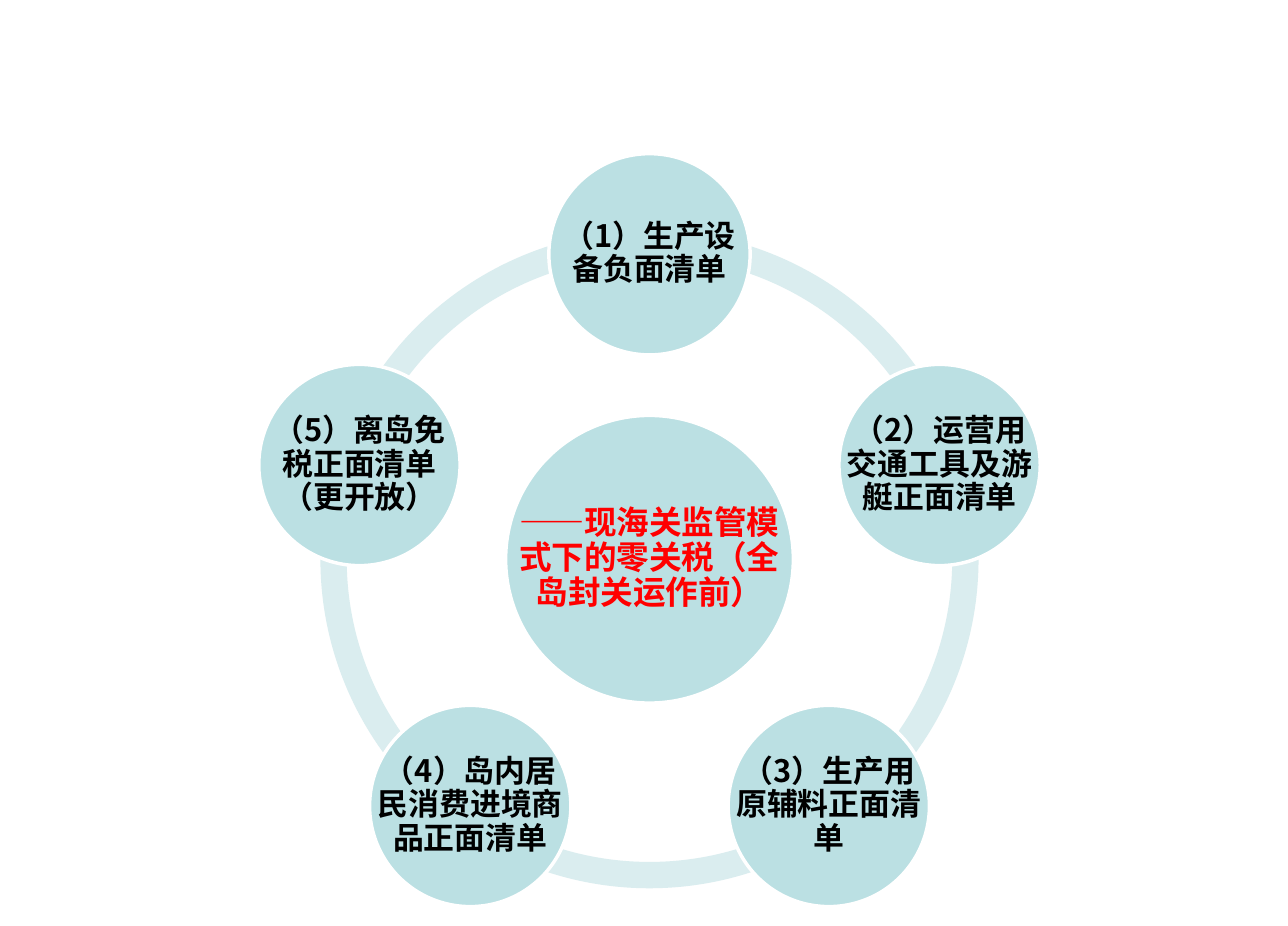
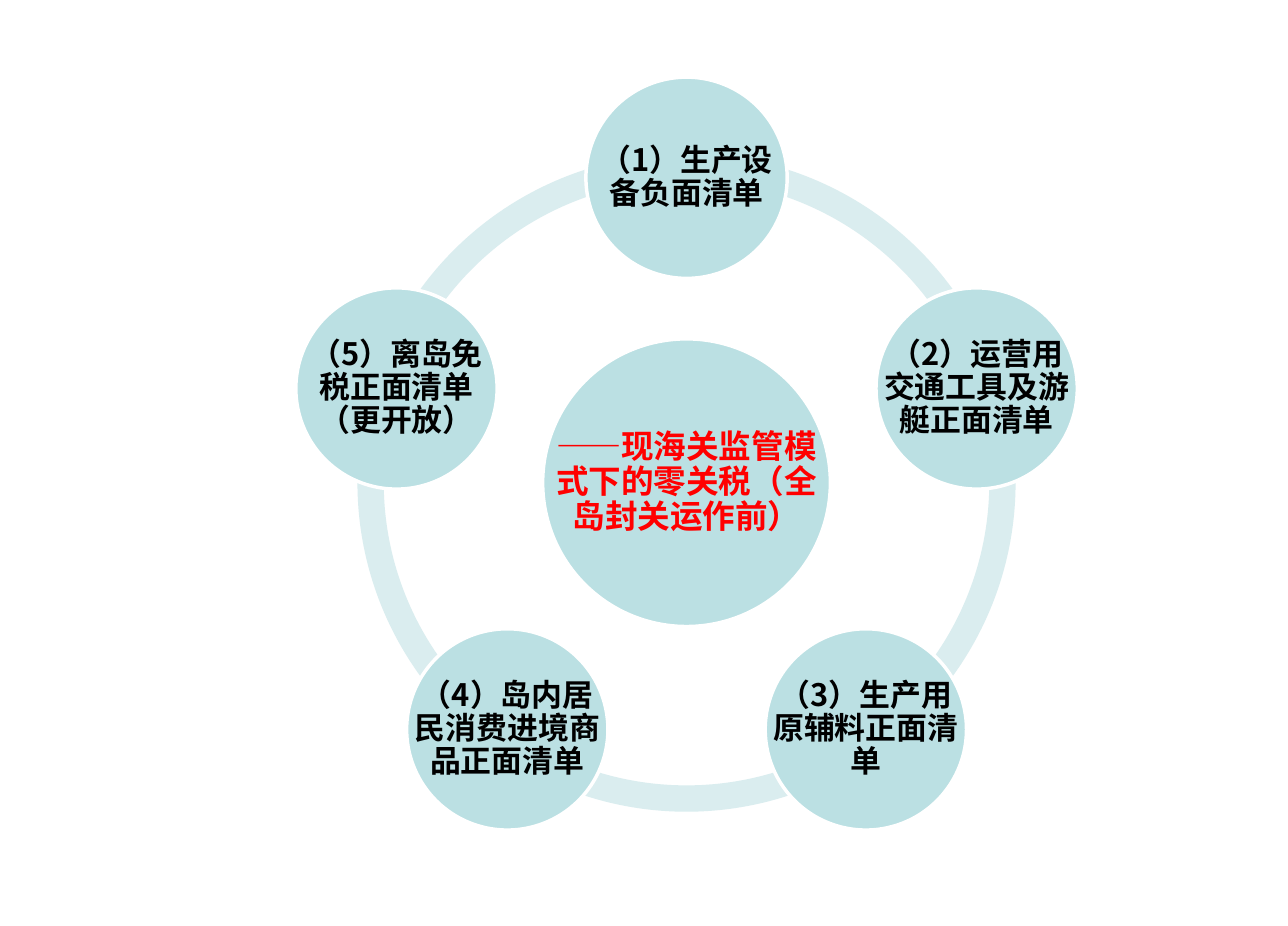
import dataclasses
import math
import typing

import pptx
import pptx.dml.color
import pptx.enum.shapes
import pptx.enum.text
import pptx.oxml.ns
import pptx.util
from lxml import etree
from pptx.util import Inches

FONT = "Noto Sans CJK SC"
HUES = {"disc": "BBE0E3", "ring": "DAEDEF", "edge": "FFFFFF",
        "core": "FF0000", "node": "000000"}
KINDS = pptx.enum.shapes.MSO_SHAPE

RING = 5.33   # outer diameter of the ring
BAND = 0.04   # ring thickness as a share of its diameter
ORBIT = 2.47  # distance from the centre to each node
CORE = 2.33
NODE = 1.63

TITLE = "——现海关监管模式下的零关税（全岛封关运作前）"
LISTS = ["（1）生产设备负面清单",
         "（2）运营用交通工具及游艇正面清单",
         "（3）生产用原辅料正面清单",
         "（4）岛内居民消费进境商品正面清单",
         "（5）离岛免税正面清单（更开放）"]


@dataclasses.dataclass
class Spot:
    """A square area given by its centre and side, in inches."""
    x: float
    y: float
    side: float

    def frame(self) -> tuple:
        half = self.side / 2
        return (Inches(self.x - half), Inches(self.y - half),
                Inches(self.side), Inches(self.side))


def paint(hue: str) -> pptx.dml.color.RGBColor:
    return pptx.dml.color.RGBColor.from_string(HUES[hue])


def add_form(slide: typing.Any, kind: typing.Any, spot: Spot, *,
             fill: str, edge: str = "") -> typing.Any:
    form = slide.shapes.add_shape(kind, *spot.frame())
    form.shadow.inherit = False
    form.fill.solid()
    form.fill.fore_color.rgb = paint(fill)
    if edge:
        form.line.color.rgb = paint(edge)
        form.line.width = pptx.util.Pt(2)
    else:
        form.line.fill.background()
    return form


def add_text(slide: typing.Any, text: str, spot: Spot, *,
             size: float, hue: str, gap: float = 0.9) -> None:
    frame = slide.shapes.add_textbox(*spot.frame()).text_frame
    frame.word_wrap = True
    frame.vertical_anchor = pptx.enum.text.MSO_ANCHOR.MIDDLE
    for side in ("left", "top", "right", "bottom"):
        setattr(frame, f"margin_{side}", Inches(0.03))
    para = frame.paragraphs[0]
    para.alignment = pptx.enum.text.PP_ALIGN.CENTER
    para.line_spacing = gap
    run = para.add_run()
    run.text = text
    font = run.font
    font.size = pptx.util.Pt(size)
    font.bold = True
    font.color.rgb = paint(hue)
    font.name = FONT
    east = etree.SubElement(run._r.get_or_add_rPr(), pptx.oxml.ns.qn("a:ea"))
    east.set("typeface", FONT)


def add_disc(slide: typing.Any, text: str, spot: Spot, *,
             size: float, hue: str) -> None:
    add_form(slide, KINDS.OVAL, spot, fill="disc", edge="edge")
    add_text(slide, text, spot, size=size, hue=hue)


def add_wheel(slide: typing.Any, x: float, y: float) -> None:
    """Draw a ring of list nodes around a central title disc."""
    step = 360 / len(LISTS)
    turns = [(270 + step * i) % 360 for i in range(len(LISTS))]
    for turn in turns:
        arc = add_form(slide, KINDS.BLOCK_ARC, Spot(x, y, RING), fill="ring")
        # Angles are stored in 60000ths of a degree, adjustments in 100000ths.
        arc.adjustments[0] = turn * 0.6
        arc.adjustments[1] = (turn + step) % 360 * 0.6
        arc.adjustments[2] = BAND
    add_disc(slide, TITLE, Spot(x, y, CORE), size=19, hue="core")
    for turn, text in zip(turns, LISTS):
        angle = math.radians(turn)
        spot = Spot(x + ORBIT * math.cos(angle),
                    y + ORBIT * math.sin(angle), NODE)
        add_disc(slide, text, spot, size=18, hue="node")


def main() -> None:
    deck = pptx.Presentation()
    deck.slide_width = Inches(10.43)
    deck.slide_height = Inches(7.5)
    for x, y in ((5.26, 4.53), (5.56, 3.91)):
        add_wheel(deck.slides.add_slide(deck.slide_layouts[6]), x, y)
    deck.save("out.pptx")


if __name__ == "__main__":
    main()
